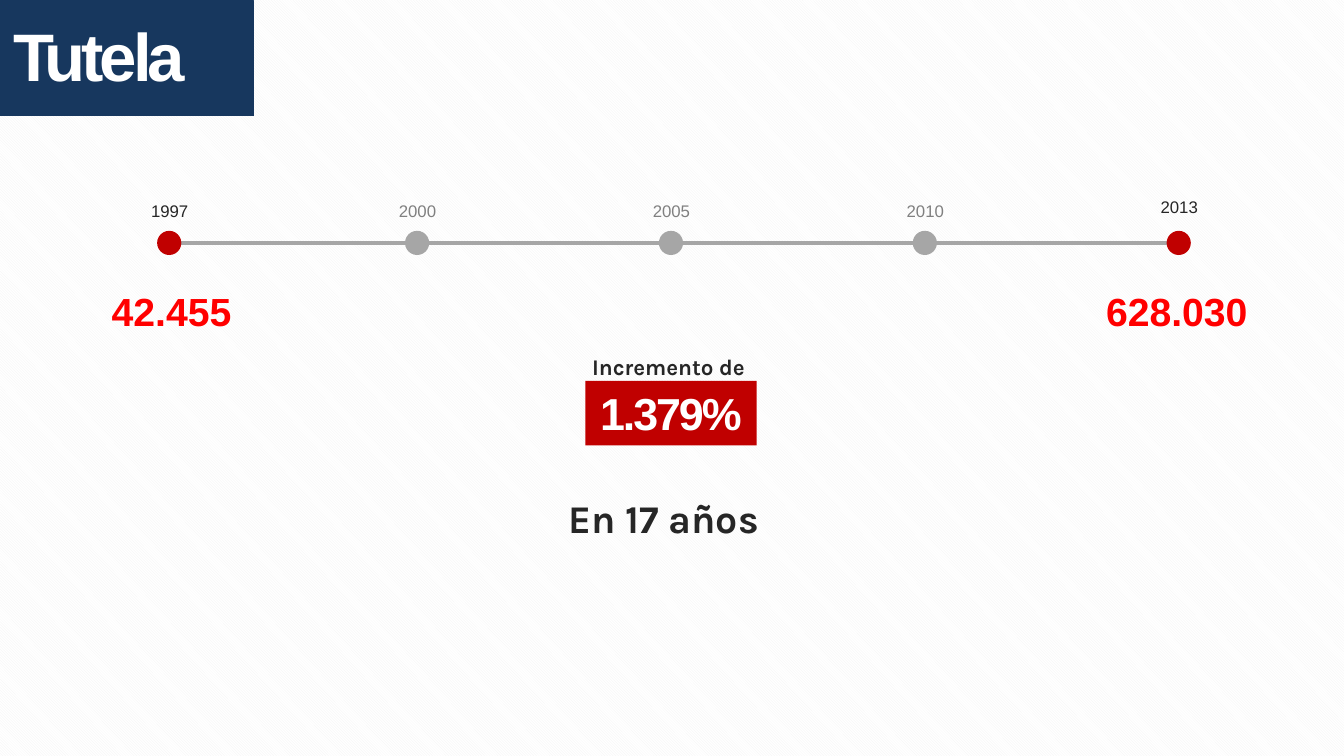
from pptx import Presentation
from pptx.dml.color import RGBColor
from pptx.enum.dml import MSO_PATTERN
from pptx.enum.shapes import MSO_CONNECTOR, MSO_SHAPE
from pptx.enum.text import MSO_ANCHOR, MSO_AUTO_SIZE, PP_ALIGN
from pptx.util import Pt
from lxml.etree import SubElement
from pptx.oxml.ns import qn

PX = 9144
SLIDE = (1334, 750)
COLORS = {
    "white": "FFFFFF", "stripe": "F2F2F2", "navy": "17375E", "crimson": "C00000",
    "red": "FF0000", "ink": "262626", "gray": "808080", "rail": "A6A6A6",
}
LEFT, CENTER = PP_ALIGN.LEFT, PP_ALIGN.CENTER

YEARS = [
    ("1997", 168, 194, "ink", "crimson"),
    ("2000", 414, 194, "gray", "rail"),
    ("2005", 666, 194, "gray", "rail"),
    ("2010", 918, 194, "gray", "rail"),
    ("2013", 1170, 190, "ink", "crimson"),
]
RAIL_Y, RAIL_START, RAIL_END, DOT = 241, 168, 1181, 24
YEAR_W, YEAR_H = 57, 30

TITLE = ("Tutela", (0, 1, 252, 114))
INCREASE = ("1.379%", (581, 378, 170, 64))
CAPTIONS = [
    ("42.455", (101, 280, 151, 57), 28, "Arial", "red", LEFT, False),
    ("628.030", (1088, 280, 163, 57), 28, "Arial", "red", LEFT, False),
    ("En 17 años", (515, 485, 287, 57), 28, "Karla", "ink", CENTER, True),
    ("Incremento de", (520, 345, 287, 37), 16, "Karla", "ink", CENTER, True),
]


def px(*lengths):
    return [length * PX for length in lengths]


def rgb(name):
    return RGBColor.from_string(COLORS[name])


def write(shape, text, size, font, color, align, bold=True, wrap=False, spacing=0,
          insets=(10, 5), fit=MSO_AUTO_SIZE.SHAPE_TO_FIT_TEXT):
    frame = shape.text_frame
    frame.word_wrap = wrap
    frame.auto_size = fit
    frame.vertical_anchor = MSO_ANCHOR.TOP
    frame.margin_left, frame.margin_top = px(*insets)
    frame.margin_right, frame.margin_bottom = px(10, 5)
    paragraph = frame.paragraphs[0]
    paragraph.alignment = align
    run = paragraph.add_run()
    run.text = text
    run.font.size, run.font.name, run.font.bold = Pt(size), font, bold
    run.font.color.rgb = rgb(color)
    if spacing:
        run.font._element.set("spc", str(spacing))


def add_block(slide, kind, box, color):
    block = slide.shapes.add_shape(kind, *px(*box))
    block.shadow.inherit = False
    block.fill.solid()
    block.fill.fore_color.rgb = rgb(color)
    block.line.fill.background()
    return block


def add_text(slide, box, *style, **options):
    write(slide.shapes.add_textbox(*px(*box)), *style, **options)


def add_timeline(slide):
    rail = slide.shapes.add_connector(
        MSO_CONNECTOR.STRAIGHT, *px(RAIL_START, RAIL_Y, RAIL_END, RAIL_Y))
    rail.line.color.rgb = rgb("rail")
    rail.line.width = Pt(3)
    SubElement(rail._element.spPr, qn("a:effectLst"))
    for year, center, top, text_color, dot_color in YEARS:
        dot_box = (center - DOT // 2, RAIL_Y - DOT // 2, DOT, DOT)
        add_block(slide, MSO_SHAPE.OVAL, dot_box, dot_color)
        year_box = (center - YEAR_W // 2, top, YEAR_W, YEAR_H)
        add_text(slide, year_box, year, 12, "Arial", text_color, CENTER, bold=False)


def main():
    deck = Presentation()
    deck.slide_width, deck.slide_height = px(*SLIDE)
    slide = deck.slides.add_slide(deck.slide_layouts[6])
    backdrop = slide.background.fill
    backdrop.patterned()
    backdrop.pattern = MSO_PATTERN.LIGHT_DOWNWARD_DIAGONAL
    backdrop.fore_color.rgb = rgb("stripe")
    backdrop.back_color.rgb = rgb("white")

    add_timeline(slide)

    increase, increase_box = INCREASE
    badge = add_block(slide, MSO_SHAPE.RECTANGLE, increase_box, "crimson")
    write(badge, increase, 32, "Arial", "white", CENTER, spacing=-150)

    title, title_box = TITLE
    banner = add_block(slide, MSO_SHAPE.RECTANGLE, title_box, "navy")
    banner.line.color.rgb = rgb("navy")
    banner.line.width = Pt(0.75)
    write(banner, title, 48, "Arial", "white", LEFT, wrap=True, spacing=-300,
          insets=(13, 13), fit=MSO_AUTO_SIZE.NONE)

    for text, box, size, font, color, align, wrap in CAPTIONS:
        add_text(slide, box, text, size, font, color, align, wrap=wrap)

    deck.save("out.pptx")


if __name__ == "__main__":
    main()
